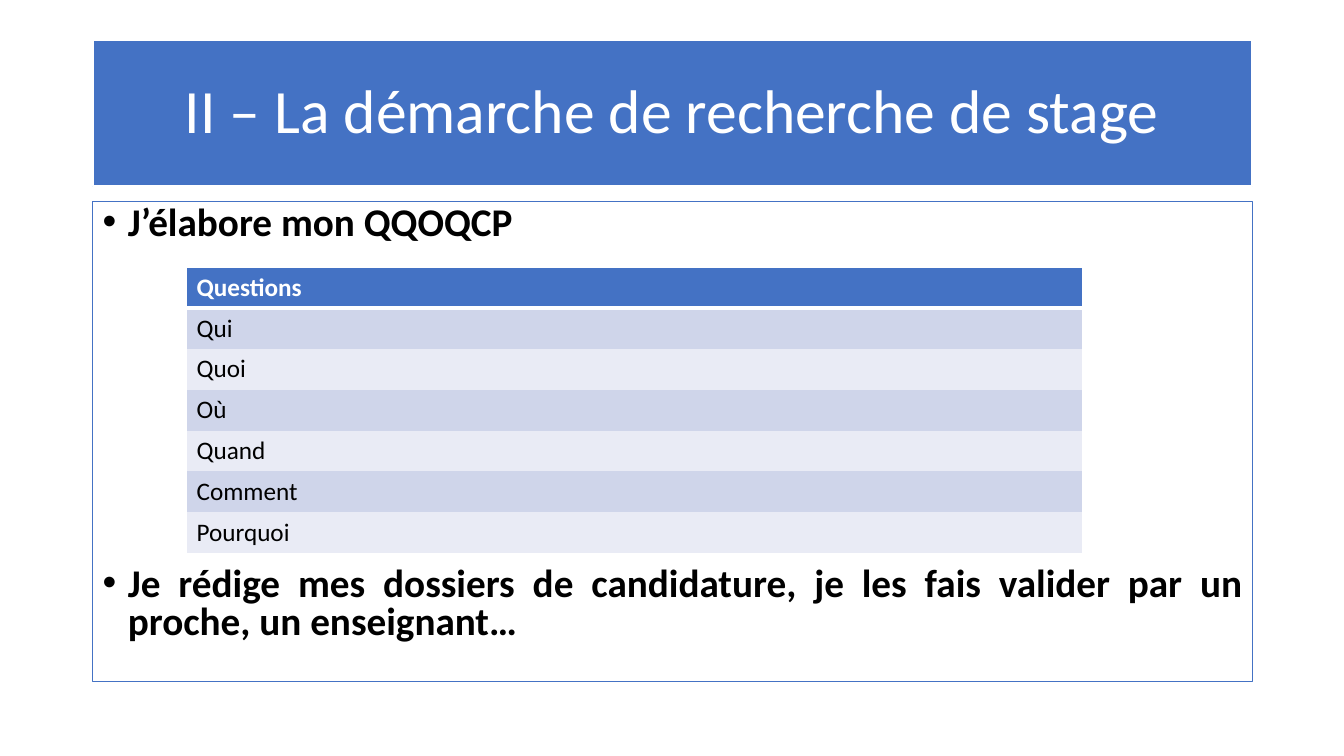
from lxml import etree
from pptx import Presentation
from pptx.dml.color import RGBColor
from pptx.enum.shapes import MSO_SHAPE
from pptx.enum.text import MSO_ANCHOR, PP_ALIGN
from pptx.oxml.ns import qn
from pptx.util import Inches, Pt

RECTANGLE = MSO_SHAPE.RECTANGLE
MIDDLE, TOP = MSO_ANCHOR.MIDDLE, MSO_ANCHOR.TOP
CENTER, LEFT, JUSTIFY = PP_ALIGN.CENTER, PP_ALIGN.LEFT, PP_ALIGN.JUSTIFY

COLORS = {
    "blue": "4472C4",
    "white": "FFFFFF",
    "black": "000000",
    "band_dark": "CFD5EA",
    "band_light": "E9EBF5",
}


def write(paragraph, text, size, color, bold=False):
    run = paragraph.add_run()
    run.text = text
    for name, value in {"name": "Calibri", "size": Pt(size), "bold": bold}.items():
        setattr(run.font, name, value)
    run.font.color.rgb = RGBColor.from_string(COLORS[color])


def add_border(cell, side, width):
    line = etree.SubElement(cell._tc.get_or_add_tcPr(), qn(f"a:{side}"), w=str(Pt(width)))
    if width:
        fill = etree.SubElement(line, qn("a:solidFill"))
        etree.SubElement(fill, qn("a:srgbClr"), val=COLORS["white"])
    else:
        etree.SubElement(line, qn("a:noFill"))


prs = Presentation()
prs.slide_width, prs.slide_height = Inches(13.33), Inches(7.5)
slide = prs.slides.add_slide(prs.slide_layouts[6])

title = slide.shapes.add_shape(RECTANGLE, Inches(0.92), Inches(0.4), Inches(11.5), Inches(1.45))
title.shadow.inherit = False
title.fill.solid()
title.fill.fore_color.rgb = RGBColor.from_string(COLORS["blue"])
title.line.color.rgb = RGBColor.from_string(COLORS["white"])
title.line.width = Pt(1.5)
title.text_frame.word_wrap = True
title.text_frame.vertical_anchor = MIDDLE
heading = title.text_frame.paragraphs[0]
heading.alignment = CENTER
heading.line_spacing = 0.9
write(heading, "II – La démarche de recherche de stage", 44, "white")

steps = slide.shapes.add_textbox(Inches(0.92), Inches(2), Inches(11.5), Inches(4.76))
steps.line.color.rgb = RGBColor.from_string(COLORS["blue"])
steps.line.width = Pt(0.75)
steps.text_frame.word_wrap = True
steps.text_frame.vertical_anchor = TOP

step_texts = [
    ("J’élabore mon QQOQCP", LEFT, 10),
    ("Je rédige mes dossiers de candidature, je les fais valider par un proche, un enseignant…", JUSTIFY, 231),
]
for index, (text, alignment, space_before) in enumerate(step_texts):
    step = steps.text_frame.add_paragraph() if index else steps.text_frame.paragraphs[0]
    layout = {"alignment": alignment, "line_spacing": 0.8, "space_before": Pt(space_before)}
    for name, value in layout.items():
        setattr(step, name, value)
    properties = step._p.get_or_add_pPr()
    properties.set("marL", str(Inches(0.25)))
    properties.set("indent", str(Inches(-0.25)))
    etree.SubElement(properties, qn("a:buFont"), typeface="Arial")
    etree.SubElement(properties, qn("a:buChar"), char="•")
    write(step, text, 28, "black", bold=True)

questions = ["Questions", "Qui", "Quoi", "Où", "Quand", "Comment", "Pourquoi"]
last = len(questions) - 1
table = slide.shapes.add_table(
    len(questions), 2, Inches(1.85), Inches(2.65), Inches(8.89), Inches(2.84)
).table
table.horz_banding = False
for column, width in zip(table.columns, (1.81, 7.08)):
    column.width = Inches(width)

for row, question in enumerate(questions):
    header = row == 0
    band = "blue" if header else "band_dark" if row % 2 else "band_light"
    for column in range(2):
        cell = table.cell(row, column)
        borders = {
            "lnL": 1 if column == 0 else 0,
            "lnR": 1 if column == 1 else 0,
            "lnT": 1 if header else 3 if row == 1 else 0,
            "lnB": 3 if header else 1 if row == last else 0,
        }
        for side, width in borders.items():
            add_border(cell, side, width)
        cell.fill.solid()
        cell.fill.fore_color.rgb = RGBColor.from_string(COLORS[band])
    write(table.cell(row, 0).text_frame.paragraphs[0], question, 18, "white" if header else "black", header)

prs.save("out.pptx")
